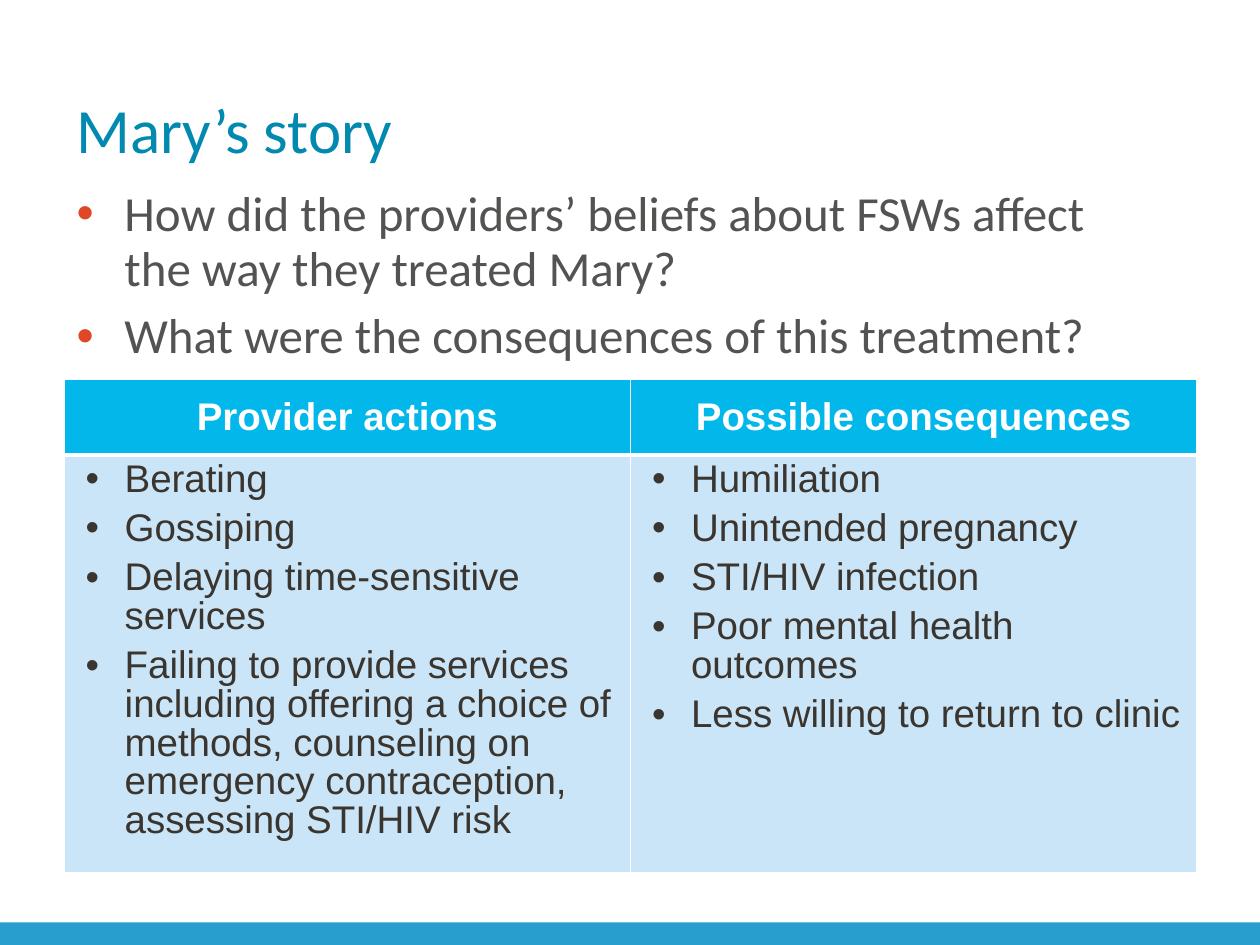
from lxml.etree import SubElement
from pptx import Presentation
from pptx.dml.color import RGBColor
from pptx.enum.shapes import MSO_SHAPE
from pptx.enum.text import MSO_ANCHOR, PP_ALIGN
from pptx.oxml import parse_xml
from pptx.oxml.ns import nsdecls, qn
from pptx.util import Inches, Pt

TITLE = "Mary’s story"
QUESTIONS = [
    "How did the providers’ beliefs about FSWs affect the way they treated Mary?",
    "What were the consequences of this treatment?",
]
COLUMNS = {
    "Provider actions": [
        "Berating",
        "Gossiping",
        "Delaying time-sensitive services",
        "Failing to provide services including offering a choice of methods, "
        "counseling on emergency contraception, assessing STI/HIV risk",
    ],
    "Possible consequences": [
        "Humiliation",
        "Unintended pregnancy",
        "STI/HIV infection",
        "Poor mental health outcomes",
        "Less willing to return to clinic",
    ],
}

WHITE, DARK = "FFFFFF", "3B352F"
LEFT, WIDTH = 0.51, 8.99
HEADER_HEIGHT, LIST_HEIGHT = 0.6, 3.1


def rgb(color):
    return RGBColor.from_string(color)


def add_bullet(paragraph, color, margin, hanging):
    props = paragraph._p.get_or_add_pPr()
    props.set("marL", str(Inches(margin)))
    props.set("indent", str(-Inches(hanging)))
    SubElement(SubElement(props, qn("a:buClr")), qn("a:srgbClr"), val=color)
    SubElement(props, qn("a:buFont"), typeface="Arial")
    SubElement(props, qn("a:buChar"), char="•")


def write(frame, lines, *, size, color, font="Arial", bold=False,
          align=PP_ALIGN.LEFT, spacing=None, bullet=None, hanging=0.38):
    """Fill a text frame with one paragraph per line."""
    frame.word_wrap = True
    for index, line in enumerate(lines):
        paragraph = frame.add_paragraph() if index else frame.paragraphs[0]
        paragraph.alignment = align
        if spacing:
            paragraph.line_spacing = spacing
        if index:
            paragraph.space_before = Pt(6)
        if bullet:
            add_bullet(paragraph, bullet, 0.38, hanging)
        run = paragraph.add_run()
        run.text = line
        run.font.name, run.font.size, run.font.bold = font, Pt(size), bold
        run.font.color.rgb = rgb(color)


def add_text(slide, top, height, lines, anchor=MSO_ANCHOR.TOP, width=WIDTH, **style):
    box = slide.shapes.add_textbox(Inches(LEFT), Inches(top), Inches(width), Inches(height))
    box.text_frame.vertical_anchor = anchor
    write(box.text_frame, lines, font="Calibri", **style)


def style_cell(cell, fill, top=1, bottom=1):
    """Set the fill and the white borders; top and bottom are in points."""
    cell.fill.solid()
    cell.fill.fore_color.rgb = rgb(fill)
    props = cell._tc.get_or_add_tcPr()
    for index, (side, points) in enumerate([("L", 1), ("R", 1), ("T", top), ("B", bottom)]):
        props.insert(index, parse_xml(
            f'<a:ln{side} {nsdecls("a")} w="{Pt(points)}"><a:solidFill>'
            f'<a:srgbClr val="{WHITE}"/></a:solidFill></a:ln{side}>'))


def add_comparison(slide):
    table = slide.shapes.add_table(
        2, len(COLUMNS), Inches(LEFT), Inches(3.01), Inches(WIDTH),
        Inches(HEADER_HEIGHT + LIST_HEIGHT)).table
    table.rows[0].height = Inches(HEADER_HEIGHT)
    table.rows[1].height = Inches(LIST_HEIGHT)
    for index, (heading, points) in enumerate(COLUMNS.items()):
        header, body = table.cell(0, index), table.cell(1, index)
        style_cell(header, "02B7EA", bottom=3)
        style_cell(body, "CAE5F7", top=3)
        header.vertical_anchor = MSO_ANCHOR.MIDDLE
        write(header.text_frame, [heading], size=22, color=WHITE, bold=True,
              align=PP_ALIGN.CENTER)
        write(body.text_frame, points, size=22, color=DARK, spacing=0.9,
              bullet=DARK, hanging=0.31)


def main():
    deck = Presentation()
    deck.slide_width, deck.slide_height = Inches(10), Inches(7.5)
    slide = deck.slides.add_slide(deck.slide_layouts[6])

    footer = slide.shapes.add_shape(
        MSO_SHAPE.RECTANGLE, Inches(0), Inches(7.32), Inches(10.05), Inches(0.21))
    footer.shadow.inherit = False
    footer.fill.solid()
    footer.fill.fore_color.rgb = rgb("279ECE")
    footer.line.fill.background()

    add_text(slide, 0.49, 1.06, [TITLE], anchor=MSO_ANCHOR.MIDDLE, size=36, color="0289B0")
    add_text(slide, 1.43, 5.19, QUESTIONS, width=8.76, size=28, color="535352",
             spacing=0.95, bullet="E04726")
    add_comparison(slide)
    deck.save("out.pptx")


if __name__ == "__main__":
    main()
